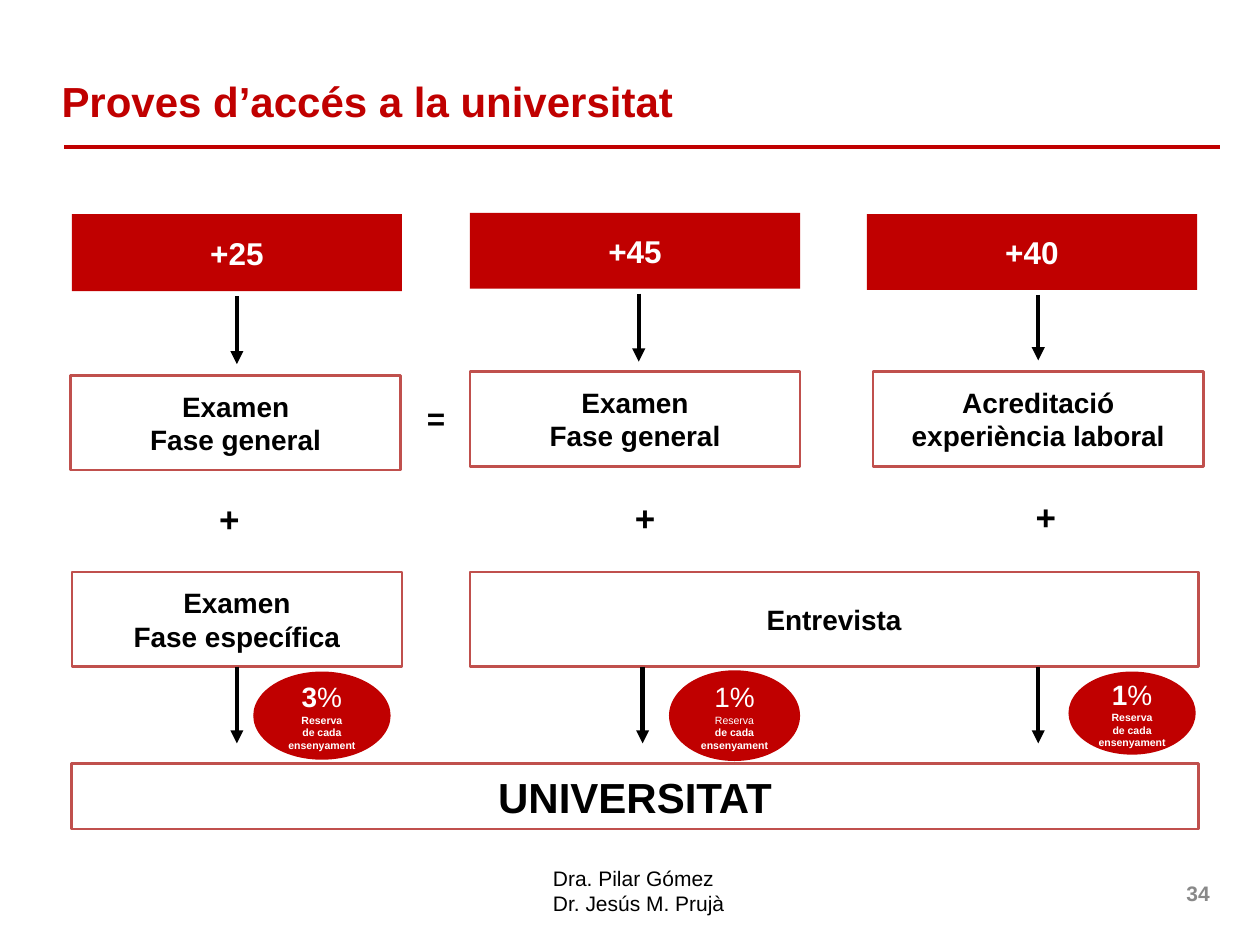
"""Build the slide on university access exams."""
from lxml import etree
from pptx import Presentation
from pptx.dml.color import RGBColor
from pptx.enum.shapes import MSO_CONNECTOR, MSO_SHAPE
from pptx.enum.text import MSO_ANCHOR, PP_ALIGN
from pptx.oxml.ns import qn
from pptx.util import Inches, Pt

STRAIGHT = MSO_CONNECTOR.STRAIGHT
BOX, OVAL = MSO_SHAPE.ROUNDED_RECTANGLE, MSO_SHAPE.OVAL
TOP, MIDDLE = MSO_ANCHOR.TOP, MSO_ANCHOR.MIDDLE
LEFT, CENTER, RIGHT = PP_ALIGN.LEFT, PP_ALIGN.CENTER, PP_ALIGN.RIGHT
rgb = RGBColor.from_string
RED, BORDER, BLACK, WHITE, GREY = "C00000", "C0504D", "000000", "FFFFFF", "898989"

prs = Presentation()
prs.slide_width, prs.slide_height = Inches(10), Inches(7.5)
s = prs.slides.add_slide(prs.slide_layouts[6])


def add_text(kind, at, paragraphs, color=BLACK, fill=None, line=None,
             align=CENTER, anchor=MIDDLE, margins=(0.1, 0.05)):
    """Add a shape or text box; each run is (text, size, bold)."""
    box = [Inches(v) for v in at]
    if kind is None:
        sp = s.shapes.add_textbox(*box)
    else:
        sp = s.shapes.add_shape(kind, *box)
        sp.shadow.inherit = False
        sp.fill.solid()
        sp.fill.fore_color.rgb = rgb(fill)
        if kind == BOX:
            sp.adjustments[0] = 0
        if line:
            sp.line.color.rgb = rgb(line)
            sp.line.width = Pt(1.5)
        else:
            sp.line.fill.background()
    tf = sp.text_frame
    x, y = [Inches(v) for v in margins]
    frame = {"word_wrap": True, "vertical_anchor": anchor, "margin_left": x,
             "margin_right": x, "margin_top": y, "margin_bottom": y}
    for name, value in frame.items():
        setattr(tf, name, value)
    for i, runs in enumerate(paragraphs):
        p = tf.add_paragraph() if i else tf.paragraphs[0]
        p.alignment = align
        for text, size, bold in runs:
            r = p.add_run()
            r.text = text
            for name, value in {"name": "Arial", "size": Pt(size), "bold": bold}.items():
                setattr(r.font, name, value)
            r.font.color.rgb = rgb(color)


def add_line(x1, y1, x2, y2, color, width, arrow=True):
    """Add a straight line, with an arrowhead at its end if wanted."""
    c = s.shapes.add_connector(STRAIGHT, *[Inches(v) for v in (x1, y1, x2, y2)])
    c.line.color.rgb = rgb(color)
    c.line.width = Pt(width)
    if arrow:
        etree.SubElement(c.line._get_or_add_ln(), qn("a:tailEnd"), type="triangle")
    etree.SubElement(c._element.spPr, qn("a:effectLst"))


add_line(0.51, 1.17, 9.68, 1.17, RED, 2.25, arrow=False)
add_text(None, (0.39, 0.52, 9.37, 0.55),
         [[("Proves d’accés a la universitat", 24, True)]], RED, align=LEFT)
add_text(None, (4.29, 6.82, 1.57, 0.51),
         [[("Dra. Pilar Gómez", 12, False)], [("Dr. Jesús M. Prujà", 12, False)]],
         align=LEFT, anchor=TOP)
add_text(None, (7.37, 6.89, 2.33, 0.4), [[("34", 12, True)]], GREY, align=RIGHT)

for x, y, h, age in [(0.57, 1.7, 0.61, "+25"), (3.73, 1.69, 0.6, "+45"), (6.88, 1.7, 0.6, "+40")]:
    add_text(BOX, (x, y, 2.62, h), [[(age, 18, True)]], WHITE, RED)

steps = [
    (0.56, 2.98, 2.62, ["Examen", "Fase general"]),
    (3.73, 2.95, 2.62, ["Examen", "Fase general"]),
    (6.93, 2.95, 2.62, ["Acreditació", "experiència laboral"]),
    (0.57, 4.54, 2.62, ["Examen", "Fase específica"]),
    (3.73, 4.54, 5.78, ["Entrevista"]),
]
for x, y, w, lines in steps:
    add_text(BOX, (x, y, w, 0.75), [[(t, 16, True)] for t in lines],
             fill=WHITE, line=BORDER, margins=(0, 0.05))
add_text(BOX, (0.57, 6.06, 8.94, 0.52), [[("UNIVERSITAT", 24, True)]], fill=WHITE, line=BORDER)

arrows = [(1.88, 2.35, 2.89), (5.07, 2.33, 2.87), (8.24, 2.34, 2.86)]
arrows += [(x, 5.29, 5.9) for x in (1.88, 5.1, 8.24)]
for x, y1, y2 in arrows:
    add_line(x, y1, x, y2, BLACK, 2.5)

signs = [(1.64, 3.9, 0.36, 0.44, "+", 20), (4.94, 3.89, 0.32, 0.44, "+", 20),
         (8.12, 3.88, 0.32, 0.44, "+", 20), (3.29, 3.12, 0.3, 0.4, "=", 18)]
for *at, sign, size in signs:
    add_text(None, at, [[(sign, size, True)]], align=LEFT, anchor=TOP)

quotas = [((2.01, 5.33, 1.09, 0.7), "3", True), ((5.31, 5.32, 1.04, 0.72), "1", False),
          ((8.48, 5.33, 1.01, 0.66), "1", True)]
for at, number, bold in quotas:
    add_text(OVAL, at, [[(number, 16, bold), ("%", 16, False)], [("Reserva", 6, bold)],
                        [("de cada ensenyament", 6, True)]], WHITE, RED, margins=(0, 0))

prs.save("out.pptx")
